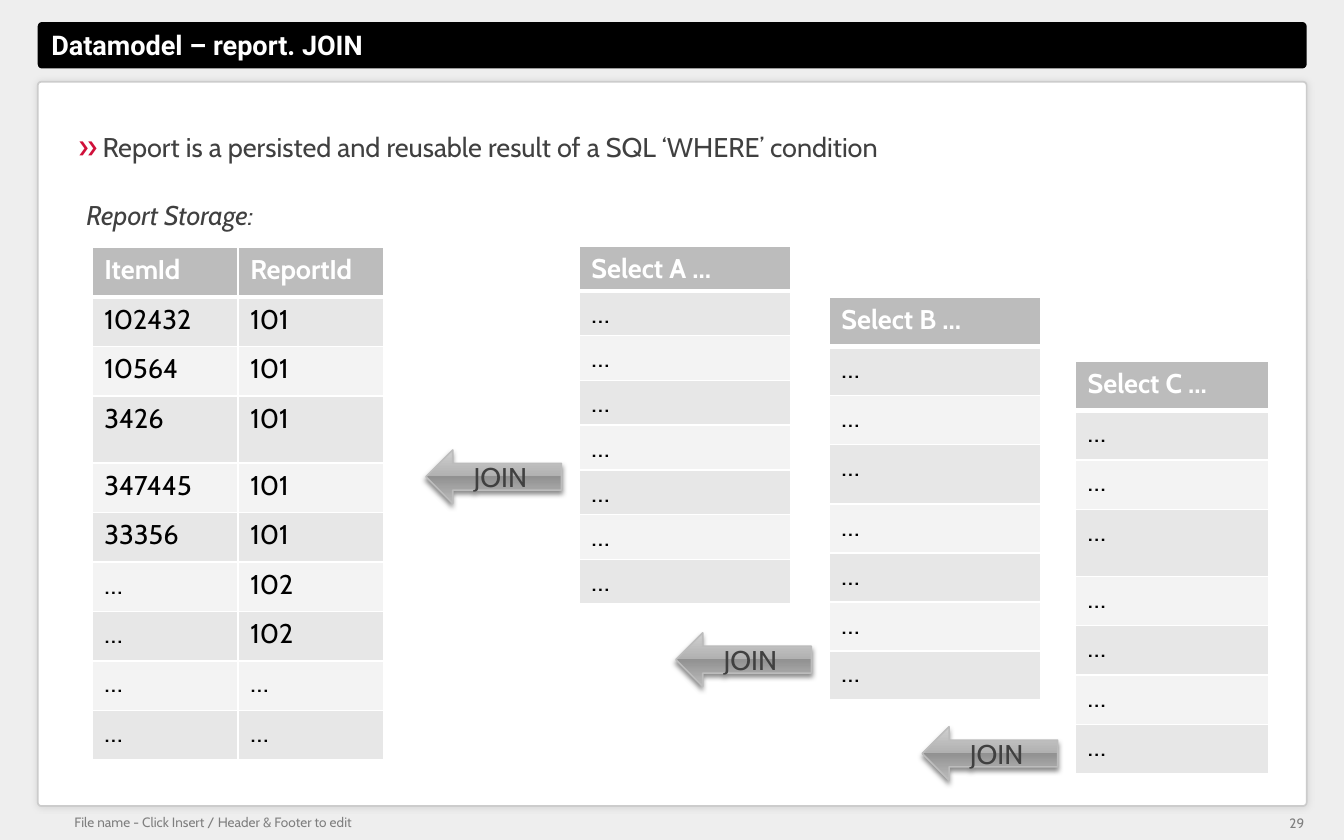
import pptx
import pptx.util
import pptx.dml.color
import pptx.enum.shapes
import pptx.enum.text
import pptx.oxml
import pptx.oxml.ns

Pt = pptx.util.Pt
Shape = pptx.enum.shapes.MSO_SHAPE
Align = pptx.enum.text.PP_ALIGN
Anchor = pptx.enum.text.MSO_ANCHOR
qn = pptx.oxml.ns.qn


class Theme:
    """Colours, fonts and type sizes of the slide."""
    back, bar, panel, edge = "EEEEEE", "000000", "FFFFFF", "CCCCCC"
    ink, dark, light, mute, mark = "404040", "000000", "FFFFFF", "7F7F7F", "D0103A"
    head, bands = "BCBCBC", ("E7E7E7", "F3F3F3")
    sheen = ((0, "D0D0D0"), (49, "B1B1B1"), (49, "919191"), (92, "B5B5B5"), (100, "C1C1C1"))
    shade = "747474"
    face, bold = "Cabin", "Roboto"
    main, small = 16, 8


def rgb(code):
    """Turn a hex code into a colour."""
    return pptx.dml.color.RGBColor.from_string(code)


def place(shape, box):
    """Move and size a shape to a box in points."""
    shape.left, shape.top, shape.width, shape.height = map(Pt, box)


def node(text):
    """Make a drawing element from its markup."""
    space = pptx.oxml.ns.nsdecls("a")
    tag, rest = text[1:].split(" ", 1)
    return pptx.oxml.parse_xml(f"<{tag} {space} {rest}")


def write(frame, text, size=Theme.main, color=Theme.ink, face=Theme.face, align=Align.LEFT,
          anchor=Anchor.TOP, inset=(7.2, 3.6), bold=False, italic=False):
    """Put one styled paragraph in a text frame and return it."""
    frame.word_wrap = True
    frame.vertical_anchor = anchor
    frame.margin_left = frame.margin_right = Pt(inset[0])
    frame.margin_top = frame.margin_bottom = Pt(inset[1])
    para = frame.paragraphs[0]
    para.text = text
    para.alignment = align
    style(para, size, color, face, bold, italic)
    return para


def style(para, size, color, face=Theme.face, bold=False, italic=False):
    """Set the font of a paragraph."""
    font = para.font
    font.size, font.name, font.bold, font.italic = Pt(size), face, bold, italic
    font.color.rgb = rgb(color)


def label(slide, box, text, **look):
    """Add a text box."""
    area = slide.shapes.add_textbox(*map(Pt, box))
    return write(area.text_frame, text, **look)


def glow(shape, color, alpha, blur, dist):
    """Give a shape a soft shadow below it."""
    shape.shadow.inherit = False
    shape._element.spPr.find(qn("a:effectLst")).append(node(
        f'<a:outerShdw blurRad="{Pt(blur)}" dist="{Pt(dist)}" dir="5400000" rotWithShape="0">'
        f'<a:srgbClr val="{color}"><a:alpha val="{alpha * 1000}"/></a:srgbClr></a:outerShdw>'))


def plate(slide, box, color, curve):
    """Add a plain rounded panel."""
    shape = slide.shapes.add_shape(Shape.ROUNDED_RECTANGLE, *map(Pt, box))
    shape.adjustments[0] = curve
    shape.fill.solid()
    shape.fill.fore_color.rgb = rgb(color)
    shape.line.fill.background()
    shape.shadow.inherit = False
    return shape


def frame(slide, box):
    """Draw the title bar, the panel and the footer in the page box."""
    left, top, wide, high = box
    fill = slide.background.fill
    fill.solid()
    fill.fore_color.rgb = rgb(Theme.back)
    bar = plate(slide, (left, top, wide, 27.4), Theme.bar, 0.09)
    sheet = plate(slide, (left, top + 35.3, wide, 427.7), Theme.panel, 0.005)
    sheet.line.color.rgb = rgb(Theme.edge)
    sheet.line.width = Pt(1)
    glow(sheet, "000000", 11, 4, 0)
    title = slide.shapes.title
    bar._element.getparent().append(title._element)
    place(title, (left + 5.8, top + 0.7, 556, 25.2))
    write(title.text_frame, "Datamodel – report. JOIN", color=Theme.light, face=Theme.bold,
          anchor=Anchor.MIDDLE, inset=(2.2, 2.2), bold=True)
    note = dict(size=Theme.small, color=Theme.mute)
    label(slide, (left + 21.6, top + high - 15.4, 699, 9.4),
          "File name - Click Insert / Header & Footer to edit",
          anchor=Anchor.MIDDLE, inset=(0, 0), **note)
    label(slide, (left + wide - 28.8, top + high - 16.8, 31.7, 13.7), "29",
          align=Align.RIGHT, inset=(4.3, 2.2), **note)


def intro(slide, box):
    """Write the bulleted statement and the storage caption."""
    left, top, wide, high = box
    area = slide.shapes.add_textbox(*map(Pt, (left, top, wide, high)))
    para = area.text_frame.paragraphs[0]
    props = para._p.get_or_add_pPr()
    props.set("marL", str(Pt(14.4)))
    props.set("indent", str(-Pt(14.4)))
    for mark in (f'<a:buClr ><a:srgbClr val="{Theme.mark}"/></a:buClr>',
                 '<a:buSzPct val="125000"/>', f'<a:buFont typeface="{Theme.face}"/>',
                 '<a:buChar char="»"/>'):
        props.append(node(mark))
    write(area.text_frame,
          "Report is a persisted and reusable result of a SQL ‘WHERE’ condition", inset=(2.2, 2.2))
    para.line_spacing = 1.4
    label(slide, (left, top + 46.8, 160, 26.6), "Report Storage:", italic=True)


def cell(box, text, row):
    """Fill, rule and write one table cell."""
    props = box._tc.get_or_add_tcPr()
    for side in "LRTB":
        thick = 3 if (side, row) in (("B", 0), ("T", 1)) else 1
        props.append(node(f'<a:ln{side} w="{Pt(thick)}"><a:solidFill>'
                          f'<a:srgbClr val="{Theme.light}"/></a:solidFill></a:ln{side}>'))
    box.fill.solid()
    box.fill.fore_color.rgb = rgb(Theme.bands[(row - 1) % 2] if row else Theme.head)
    para = box.text_frame.paragraphs[0]
    para.text = text
    style(para, Theme.main, Theme.dark if row else Theme.light, bold=not row)


def grid(slide, box, rows, tall):
    """Add a table of even rows, but for the fourth, which has its own height."""
    left, top, wide, high = box
    count, cols = len(rows), len(rows[0])
    table = slide.shapes.add_table(count, cols, *map(Pt, box)).table
    table.horz_banding = False
    for col in table.columns:
        col.width = Pt(wide / cols)
    for at, row in enumerate(rows):
        table.rows[at].height = Pt(tall if at == 3 else (high - tall) / (count - 1))
        for col, text in enumerate(row):
            cell(table.cell(at, col), text, at)


def arrow(slide, box):
    """Add a shaded arrow that reads JOIN."""
    shape = slide.shapes.add_shape(Shape.LEFT_ARROW, *map(Pt, box))
    shape.fill.gradient()
    shape.fill.gradient_angle = 270
    stops = shape._element.spPr.find(".//" + qn("a:gsLst"))
    for stop in list(stops):
        stops.remove(stop)
    for spot, color in Theme.sheen:
        stops.append(node(f'<a:gs pos="{spot * 1000}"><a:srgbClr val="{color}"/></a:gs>'))
    shape.line.color.rgb = rgb(Theme.head)
    shape.line.width = Pt(0.9)
    glow(shape, Theme.shade, 83, 3.1, 2)
    write(shape.text_frame, "JOIN", align=Align.CENTER, anchor=Anchor.MIDDLE)


def query(slide, box, name, tall, drop):
    """Add a query table with the arrow that joins it to its left."""
    left, top = box[:2]
    grid(slide, box, [[f"Select {name} ..."]] + [["…"]] * 7, tall)
    arrow(slide, (left - 90.5, top + drop, 80, 31.7))


def main():
    """Build the slide and save it."""
    deck = pptx.Presentation()
    deck.slide_width, deck.slide_height = Pt(793.5), Pt(496)
    slide = deck.slides.add_slide(deck.slide_layouts[5])
    frame(slide, (22.3, 13, 749.2, 483))
    intro(slide, (43.9, 67, 699, 65.5))
    items = ["102432", "10564", "3426", "347445", "33356"] + ["…"] * 4
    reports = ["101"] * 5 + ["102"] * 2 + ["…"] * 2
    grid(slide, (54.4, 146.2, 172.4, 302.4), [("ItemId", "ReportId"), *zip(items, reports)], 39.6)
    query(slide, (342, 145.4, 125, 211.2), "A", 26.4, 120.3)
    query(slide, (489.6, 175.7, 125, 237.6), "B", 35.3, 198)
    query(slide, (635, 213.1, 113.8, 244), "C", 39.6, 216)
    deck.save("out.pptx")


if __name__ == "__main__":
    main()
